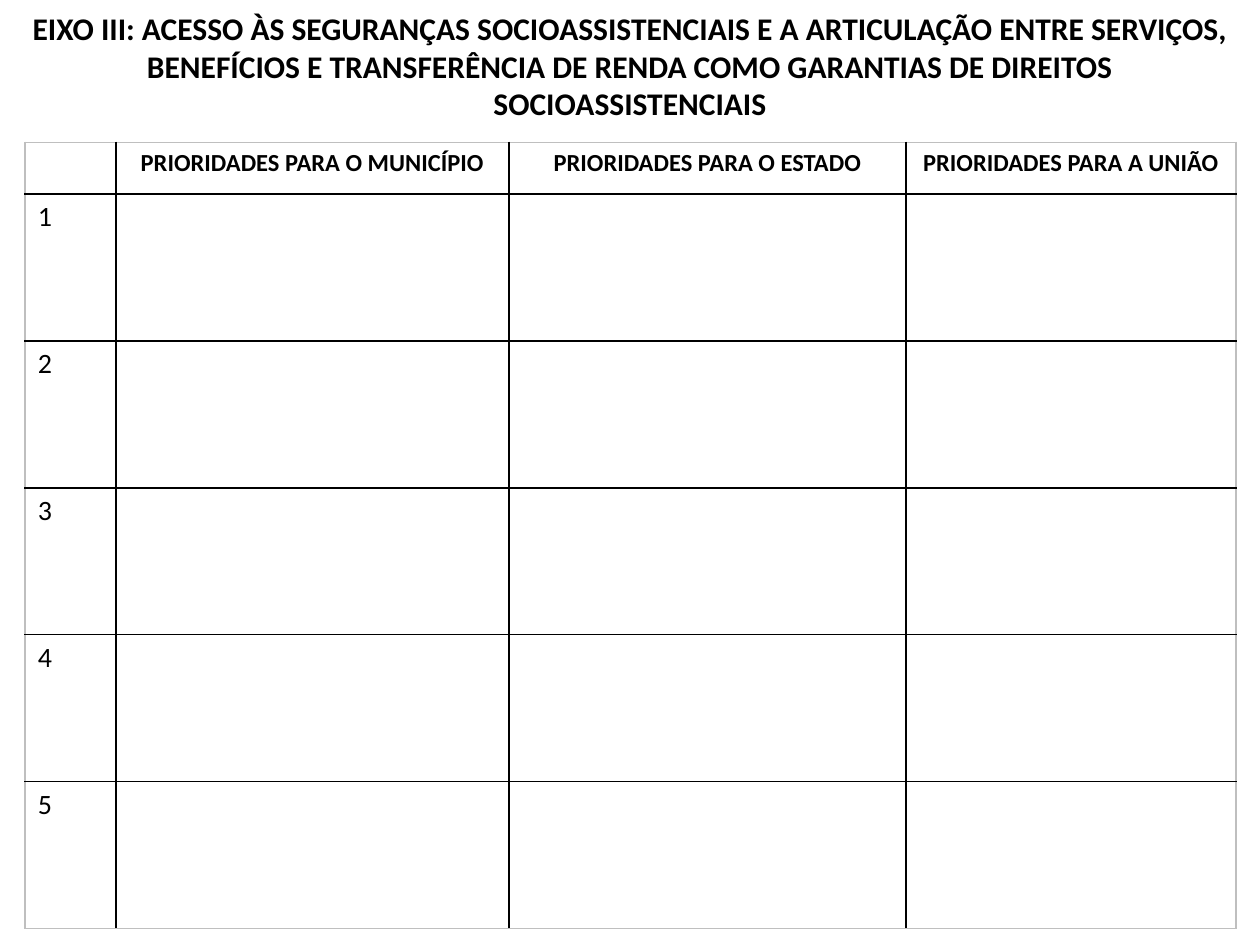
"""Build a slide with a blank priorities table for the third conference theme."""
from dataclasses import dataclass

import pptx
import pptx.dml.color
import pptx.enum.text
import pptx.oxml
import pptx.oxml.ns
import pptx.util

Inches = pptx.util.Inches
COLORS = {"text": "000000", "inner": "000000", "outer": "BFBFBF", "cell": "FFFFFF"}
CENTER = pptx.enum.text.PP_ALIGN.CENTER
LEFT = pptx.enum.text.PP_ALIGN.LEFT
TITLE = (
    "EIXO III: ACESSO ÀS SEGURANÇAS SOCIOASSISTENCIAIS E A ARTICULAÇÃO ENTRE SERVIÇOS, "
    "BENEFÍCIOS E TRANSFERÊNCIA DE RENDA COMO GARANTIAS DE DIREITOS SOCIOASSISTENCIAIS"
)


@dataclass
class Column:
    heading: str
    width: float


COLUMNS = [
    Column("", 0.72),
    Column("PRIORIDADES PARA O MUNICÍPIO", 3.12),
    Column("PRIORIDADES PARA O ESTADO", 3.15),
    Column("PRIORIDADES PARA A UNIÃO", 2.62),
]
PRIORITIES = 5
HEADER_HEIGHT = 0.41
TABLE_HEIGHT = 6.24


def write(tf, text: str, size: int, bold: bool, align) -> None:
    """Write one formatted run into a text frame."""
    p = tf.paragraphs[0]
    p.alignment = align
    r = p.add_run()
    r.text = text
    formats = {"name": "Calibri", "size": pptx.util.Pt(size), "bold": bold}
    for name, value in formats.items():
        setattr(r.font, name, value)
    r.font.color.rgb = pptx.dml.color.RGBColor.from_string(COLORS["text"])


def style_cell(cell, outer_sides: dict[str, bool]) -> None:
    """Give a cell its four borders and a plain fill."""
    tc_pr = cell._tc.get_or_add_tcPr()
    for side, is_outer in outer_sides.items():
        color = COLORS["outer" if is_outer else "inner"]
        tc_pr.append(pptx.oxml.parse_xml(
            f'<a:ln{side} {pptx.oxml.ns.nsdecls("a")} w="{pptx.util.Pt(1)}">'
            f'<a:solidFill><a:srgbClr val="{color}"/></a:solidFill></a:ln{side}>'
        ))
    cell.fill.solid()
    cell.fill.fore_color.rgb = pptx.dml.color.RGBColor.from_string(COLORS["cell"])


def add_title(s) -> None:
    """Add the centred theme title."""
    tf = s.shapes.add_textbox(Inches(0), Inches(0.02), Inches(10), Inches(1.01)).text_frame
    tf.word_wrap = True
    write(tf, TITLE, 18, True, CENTER)


def add_priorities(s) -> None:
    """Add the table with one numbered row for each priority."""
    width = sum(column.width for column in COLUMNS)
    table = s.shapes.add_table(
        PRIORITIES + 1, len(COLUMNS), Inches(0.2), Inches(1.13),
        Inches(width), Inches(TABLE_HEIGHT),
    ).table
    table.first_row = table.horz_banding = False
    for i, row in enumerate(table.rows):
        body_height = (TABLE_HEIGHT - HEADER_HEIGHT) / PRIORITIES
        row.height = Inches(body_height if i else HEADER_HEIGHT)
        for j, cell in enumerate(row.cells):
            style_cell(cell, {
                "L": j == 0, "R": j == len(COLUMNS) - 1,
                "T": i == 0, "B": i == PRIORITIES,
            })
            if i == 0 and j:
                write(cell.text_frame, COLUMNS[j].heading, 14, True, CENTER)
            elif i and j == 0:
                write(cell.text_frame, str(i), 16, False, LEFT)
    for j, column in enumerate(COLUMNS):
        table.columns[j].width = Inches(column.width)


def main() -> None:
    """Create and save the presentation."""
    prs = pptx.Presentation()
    prs.slide_width, prs.slide_height = Inches(10), Inches(7.5)
    s = prs.slides.add_slide(prs.slide_layouts[6])
    add_title(s)
    add_priorities(s)
    prs.save("out.pptx")


if __name__ == "__main__":
    main()
